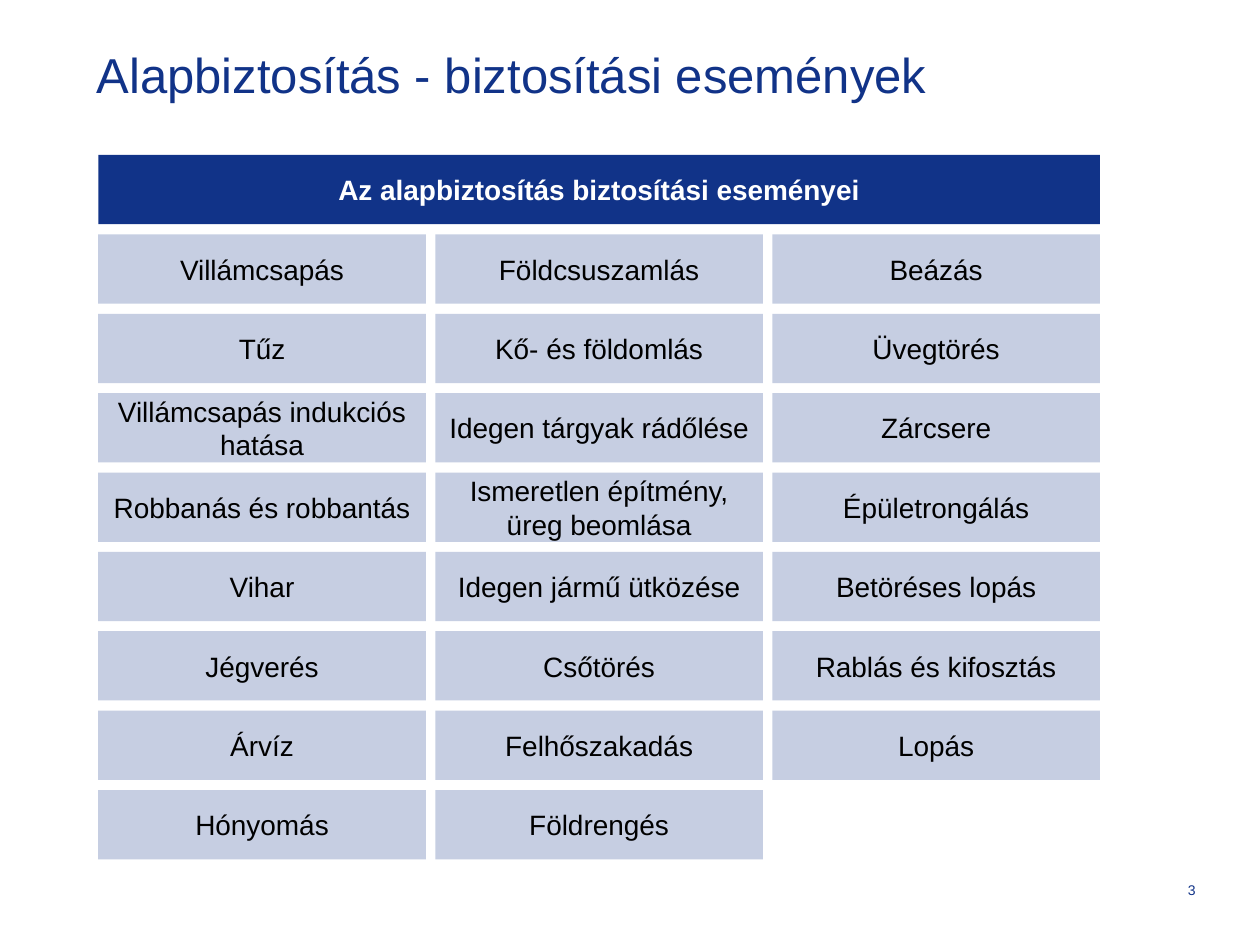
from pptx import Presentation
from pptx import util as u
from pptx.dml.color import RGBColor
from pptx.enum import shapes, text

NAVY, PALE, BLACK, WHITE = "113388", "C6CEE2", "000000", "FFFFFF"
LEFT, TOP, TABLE_WIDTH = 0.78, 1.23, 7.95
CELL_WIDTH, CELL_HEIGHT = 2.6, 0.55
ROW_STEP = 0.63

EVENTS = [
    ["Villámcsapás", "Tűz", "Villámcsapás indukciós hatása", "Robbanás és robbantás",
     "Vihar", "Jégverés", "Árvíz", "Hónyomás"],
    ["Földcsuszamlás", "Kő- és földomlás", "Idegen tárgyak rádőlése",
     "Ismeretlen építmény, üreg beomlása", "Idegen jármű ütközése", "Csőtörés",
     "Felhőszakadás", "Földrengés"],
    ["Beázás", "Üvegtörés", "Zárcsere", "Épületrongálás", "Betöréses lopás",
     "Rablás és kifosztás", "Lopás"],
]
COLUMN_STEP = (TABLE_WIDTH - CELL_WIDTH) / (len(EVENTS) - 1)


def color(value):
    return RGBColor.from_string(value)


class SlideBuilder:
    """Draws text and filled boxes on one slide in a shared style."""

    def __init__(self, slide, font="Arial"):
        self.slide = slide
        self.font = font

    def set_text(self, frame, words, size, ink, align, anchor, insets=(0.1, 0.05, 0.1, 0.05), bold=False):
        frame.word_wrap = True
        frame.vertical_anchor = anchor
        (frame.margin_left, frame.margin_top,
         frame.margin_right, frame.margin_bottom) = map(u.Inches, insets)
        line = frame.paragraphs[0]
        line.text = words
        line.alignment = align
        line.font.name = self.font
        line.font.size = u.Pt(size)
        line.font.bold = bold
        line.font.color.rgb = color(ink)

    def label(self, words, place, size, align, anchor, **style):
        label = self.slide.shapes.add_textbox(*map(u.Inches, place))
        self.set_text(label.text_frame, words, size, NAVY, align, anchor, **style)

    def box(self, words, place, fill, ink, bold=False):
        box = self.slide.shapes.add_shape(shapes.MSO_SHAPE.RECTANGLE, *map(u.Inches, place))
        box.shadow.inherit = False
        box.fill.solid()
        box.fill.fore_color.rgb = color(fill)
        box.line.fill.background()
        self.set_text(box.text_frame, words, 16, ink, text.PP_ALIGN.CENTER,
                      text.MSO_ANCHOR.MIDDLE, bold=bold)


def main():
    deck = Presentation()
    deck.slide_width, deck.slide_height = u.Inches(10), u.Inches(7.5)
    builder = SlideBuilder(deck.slides.add_slide(deck.slide_layouts[6]))

    builder.label("Alapbiztosítás - biztosítási események", (0.67, 0.17, 6.93, 0.83), 28,
                  text.PP_ALIGN.LEFT, text.MSO_ANCHOR.MIDDLE)
    builder.box("Az alapbiztosítás biztosítási eseményei",
                (LEFT, TOP, TABLE_WIDTH, CELL_HEIGHT), NAVY, WHITE, bold=True)
    for column, events in enumerate(EVENTS):
        for row, event in enumerate(events, start=1):
            place = (LEFT + column * COLUMN_STEP, TOP + row * ROW_STEP, CELL_WIDTH, CELL_HEIGHT)
            builder.box(event, place, PALE, BLACK)
    builder.label("3", (7.17, 6.9, 2.32, 0.6), 8, text.PP_ALIGN.RIGHT,
                  text.MSO_ANCHOR.TOP, insets=(0, 0.1, 0, 0))

    deck.save("out.pptx")


if __name__ == "__main__":
    main()
